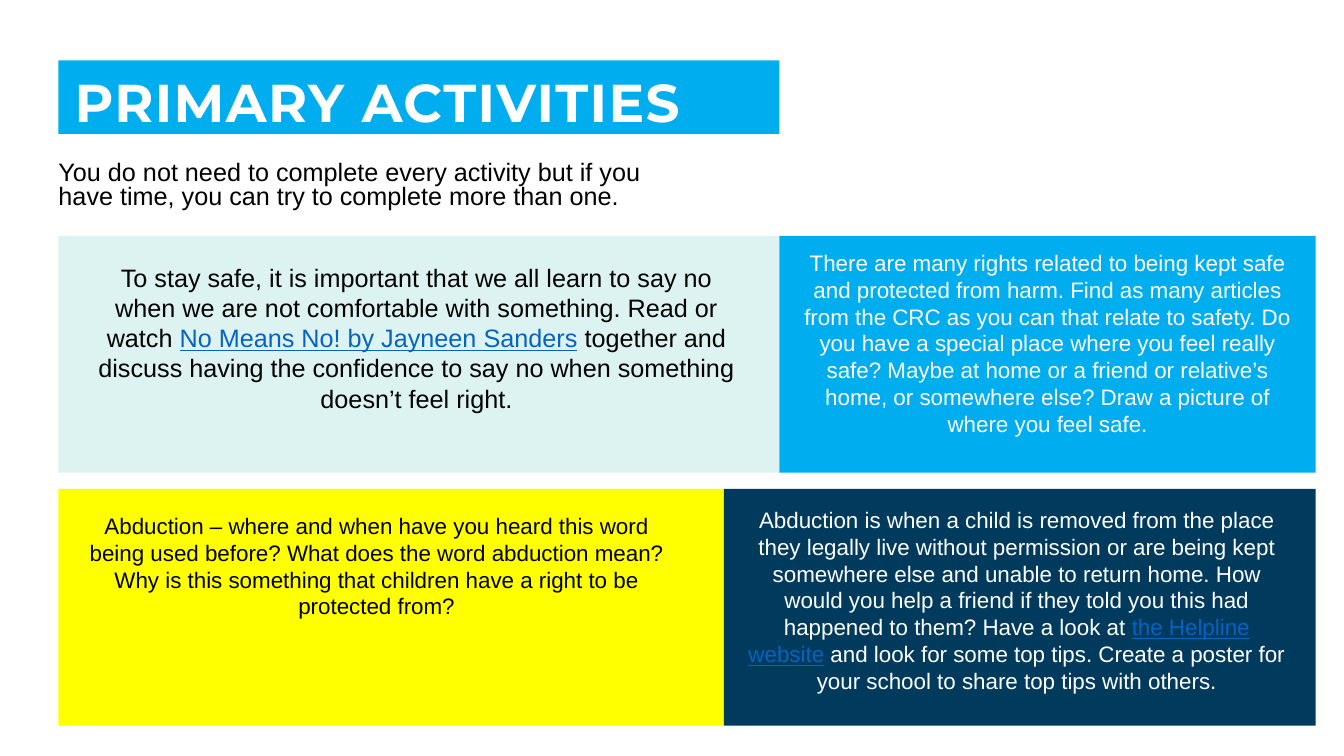
from pptx import Presentation
from pptx.dml.color import RGBColor
from pptx.enum.shapes import MSO_SHAPE as Shape
from pptx.enum.text import MSO_ANCHOR as Anchor, PP_ALIGN as Align
from pptx.util import Emu, Pt

PX = 9144  # 100 px to the inch
SKY, NAVY, YELLOW, MINT = "00AEEF", "003B5E", "FFFF00", "DDF3F1"
WHITE, BLACK, INK, LINK = "FFFFFF", "000000", "030303", "0563C1"

LEFT, RIGHT = 58, 1305
TOP_ROW, BOTTOM_ROW, ROW_HEIGHT = 234, 485, 235
TOP_SPLIT, BOTTOM_SPLIT = 773, 718


def px(length):
    return Emu(length * PX)


def rgb(code):
    return RGBColor.from_string(code)


def add_block(page, box, colour):
    block = page.shapes.add_shape(Shape.RECTANGLE, *map(px, box))
    block.shadow.inherit = False
    block.fill.solid()
    block.fill.fore_color.rgb = rgb(colour)
    block.line.fill.background()
    return block


def set_margins(frame, left, top, right, bottom):
    frame.word_wrap = True
    frame.margin_left, frame.margin_top = px(left), px(top)
    frame.margin_right, frame.margin_bottom = px(right), px(bottom)


def style(para, size, colour, align, font="Arial"):
    para.alignment = align
    para.font.name = font
    para.font.size = Pt(size)
    para.font.color.rgb = rgb(colour)


def add_heading(page, box, text):
    block = add_block(page, box, SKY)
    frame = block.text_frame
    set_margins(frame, 16, 16, 12, 0)
    frame.vertical_anchor = Anchor.MIDDLE
    para = frame.paragraphs[0]
    para.line_spacing = 0.9
    span = para.add_run()
    span.text = text
    span._r.get_or_add_rPr().set("spc", "100")
    style(para, 38, WHITE, Align.LEFT, "Montserrat")
    para.font.bold = True


def add_intro(page, box, text):
    frame = page.shapes.add_textbox(*map(px, box)).text_frame
    set_margins(frame, 0, 5, 10, 5)
    para = frame.paragraphs[0]
    para.text = text
    para.line_spacing = 0.8
    style(para, 18, BLACK, Align.LEFT)


def add_activity(page, box, fill, inset, size, colour, before, link="", after=""):
    """Coloured block with centred text; inset is left, top, right, bottom."""
    add_block(page, box, fill)
    left, top, width, height = box
    in_left, in_top, in_right, in_bottom = inset
    text_box = (left + in_left, top + in_top,
                width - in_left - in_right, height - in_top - in_bottom)
    frame = page.shapes.add_textbox(*map(px, text_box)).text_frame
    set_margins(frame, 10, 5, 10, 5)
    para = frame.paragraphs[0]
    style(para, size, colour, Align.CENTER)
    for text in filter(None, (before, link, after)):
        span = para.add_run()
        span.text = text
        if text == link:
            span.font.color.rgb = rgb(LINK)
            span.font.underline = True


def build_activities(page):
    add_heading(page, (LEFT, 60, TOP_SPLIT - LEFT, 73), "PRIMARY ACTIVITIES")
    add_intro(page, (LEFT, 156, 621, 62),
              "You do not need to complete every activity but if you have time, "
              "you can try to complete more than one.")
    add_activity(
        page, (LEFT, TOP_ROW, TOP_SPLIT - LEFT, ROW_HEIGHT), MINT,
        (19, 21, 24, 52), 18, INK,
        "To stay safe, it is important that we all learn to say no when we are "
        "not comfortable with something. Read or watch ",
        "No Means No! by Jayneen Sanders",
        " together and discuss having the confidence to say no when something "
        "doesn’t feel right.")
    add_activity(
        page, (TOP_SPLIT, TOP_ROW, RIGHT - TOP_SPLIT, ROW_HEIGHT), SKY,
        (14, 8, 14, 28), 16, WHITE,
        "There are many rights related to being kept safe and protected from "
        "harm. Find as many articles from the CRC as you can that relate to "
        "safety. Do you have a special place where you feel really safe? Maybe "
        "at home or a friend or relative’s home, or somewhere else? Draw a "
        "picture of where you feel safe.")
    add_activity(
        page, (LEFT, BOTTOM_ROW, BOTTOM_SPLIT - LEFT, ROW_HEIGHT), YELLOW,
        (10, 18, 39, 72), 16, BLACK,
        "Abduction – where and when have you heard this word being used before? "
        "What does the word abduction mean? Why is this something that children "
        "have a right to be protected from?")
    add_activity(
        page, (BOTTOM_SPLIT, BOTTOM_ROW, RIGHT - BOTTOM_SPLIT, ROW_HEIGHT), NAVY,
        (9, 12, 15, 24), 16, WHITE,
        "Abduction is when a child is removed from the place they legally live "
        "without permission or are being kept somewhere else and unable to "
        "return home. How would you help a friend if they told you this had "
        "happened to them? Have a look at ",
        "the Helpline website",
        " and look for some top tips. Create a poster for your school to share "
        "top tips with others.")


def main():
    deck = Presentation()
    deck.slide_width, deck.slide_height = px(1333), px(750)
    build_activities(deck.slides.add_slide(deck.slide_layouts[6]))
    deck.save("out.pptx")


if __name__ == "__main__":
    main()
